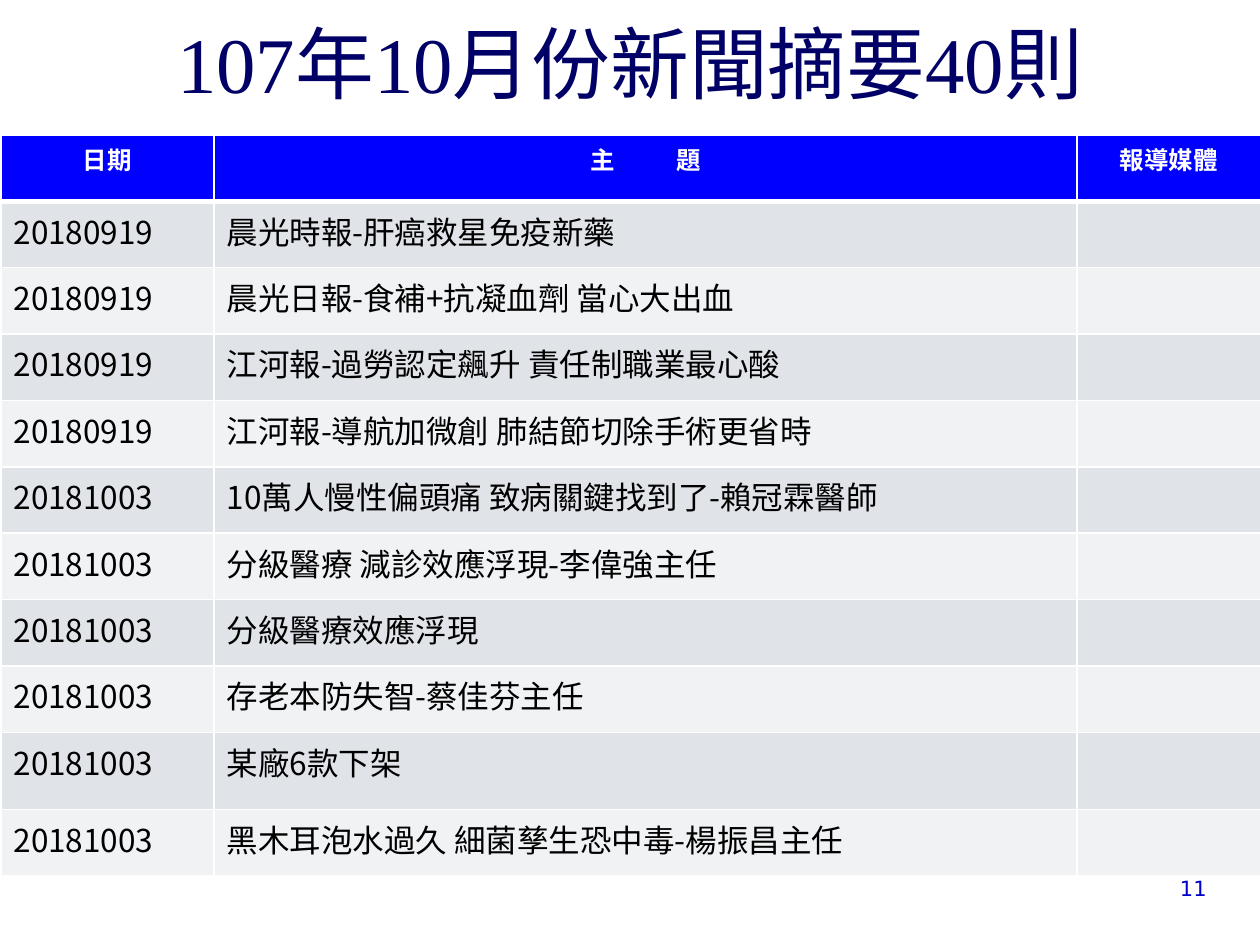
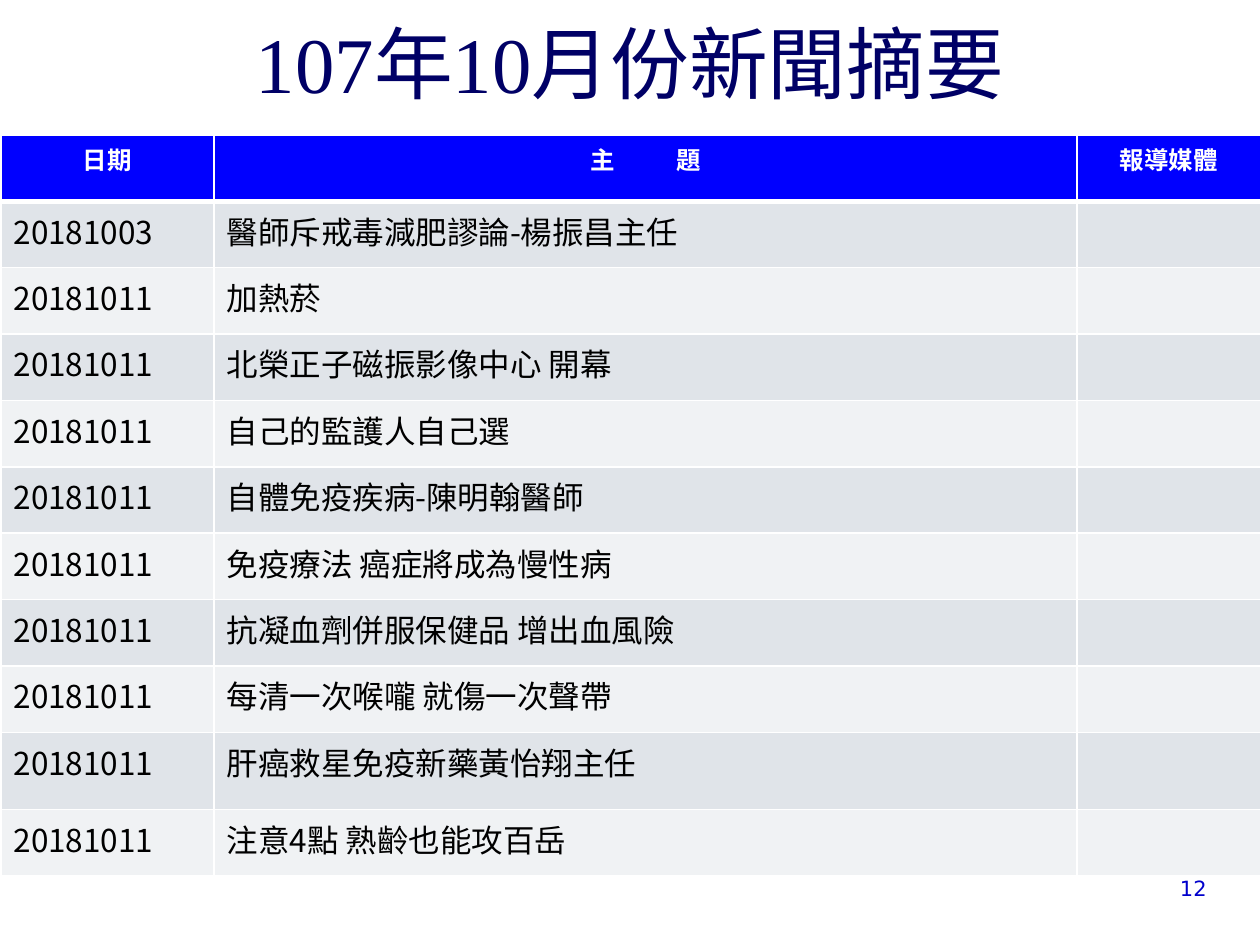
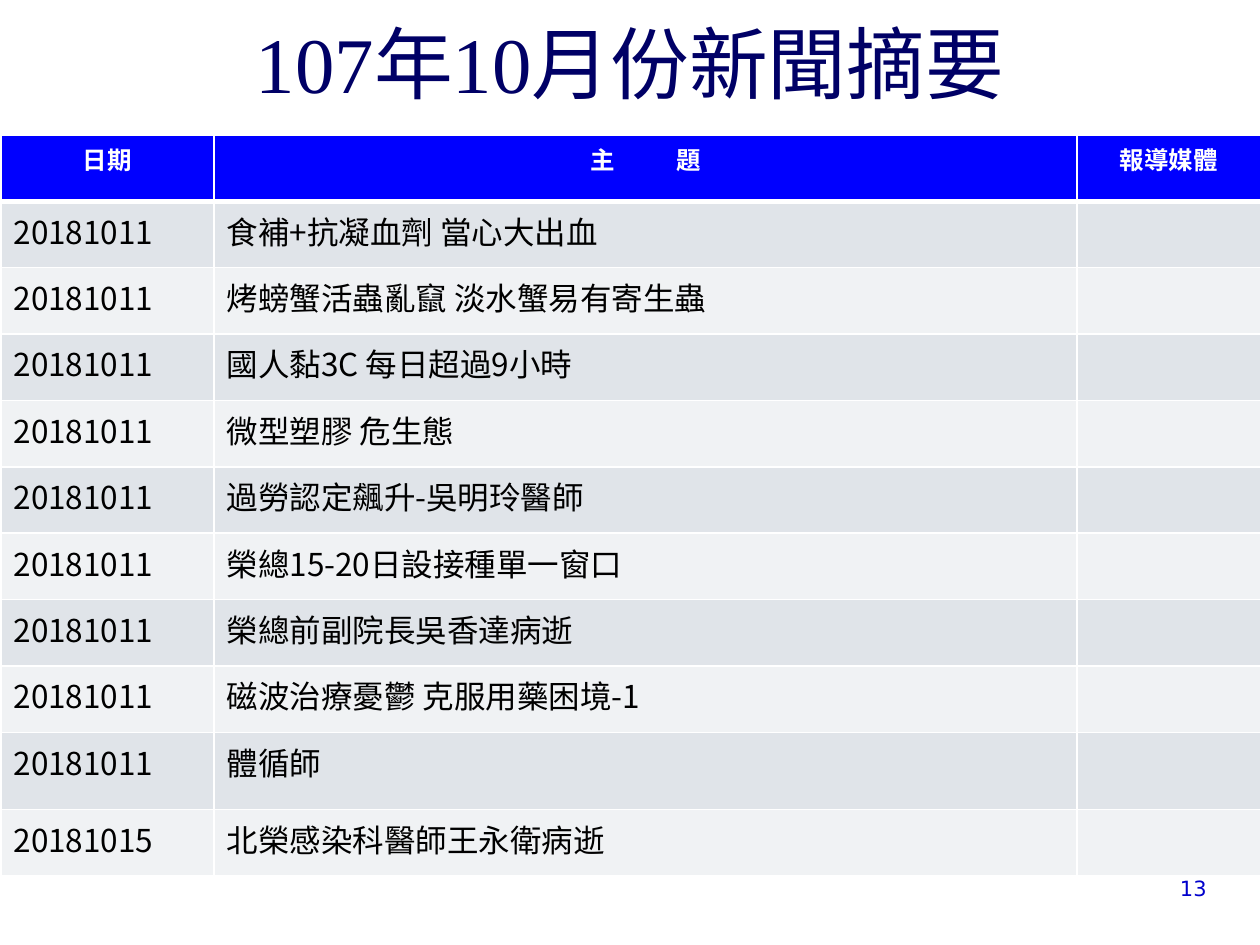
from lxml import etree
from pptx import Presentation
from pptx.dml.color import RGBColor
from pptx.enum.text import MSO_ANCHOR, MSO_AUTO_SIZE, PP_ALIGN
from pptx.oxml.ns import qn
from pptx.util import Pt

CENTER, RIGHT, LEFT = PP_ALIGN.CENTER, PP_ALIGN.RIGHT, PP_ALIGN.LEFT
BOTTOM, NO_FIT = MSO_ANCHOR.BOTTOM, MSO_AUTO_SIZE.NONE
PX = 914400 / 126
CJK = "Noto Sans CJK SC"
NAVY, BLUE, NUMBER_BLUE = "000066", "0000FF", "0000CC"
WHITE, BLACK = "FFFFFF", "000000"
BANDS = ["F0F2F4", "E0E4E9"]
COLUMNS = [213, 863, 184]
TABLE_TOP, TABLE_HEIGHT = 135, 741
TALL_ROW, TALL_HEIGHT = 9, 77
FIRST_NUMBER = 11
HEADER = [["日期"], ["主", " ", "題"], ["報導媒體"]]
HEADER_GAP = 3200

SLIDES = [
    ("107年10月份新聞摘要40則", [
        ("20180919", "晨光時報-肝癌救星免疫新藥"),
        ("20180919", "晨光日報-食補+抗凝血劑 當心大出血"),
        ("20180919", "江河報-過勞認定飆升 責任制職業最心酸"),
        ("20180919", "江河報-導航加微創 肺結節切除手術更省時"),
        ("20181003", "10萬人慢性偏頭痛 致病關鍵找到了-賴冠霖醫師"),
        ("20181003", "分級醫療 減診效應浮現-李偉強主任"),
        ("20181003", "分級醫療效應浮現"),
        ("20181003", "存老本防失智-蔡佳芬主任"),
        ("20181003", "某廠6款下架"),
        ("20181003", "黑木耳泡水過久 細菌孳生恐中毒-楊振昌主任"),
    ]),
    ("107年10月份新聞摘要", [
        ("20181003", "醫師斥戒毒減肥謬論-楊振昌主任"),
        ("20181011", "加熱菸"),
        ("20181011", "北榮正子磁振影像中心 開幕"),
        ("20181011", "自己的監護人自己選"),
        ("20181011", "自體免疫疾病-陳明翰醫師"),
        ("20181011", "免疫療法 癌症將成為慢性病"),
        ("20181011", "抗凝血劑併服保健品 增出血風險"),
        ("20181011", "每清一次喉嚨 就傷一次聲帶"),
        ("20181011", "肝癌救星免疫新藥黃怡翔主任"),
        ("20181011", "注意4點 熟齡也能攻百岳"),
    ]),
    ("107年10月份新聞摘要", [
        ("20181011", "食補+抗凝血劑 當心大出血"),
        ("20181011", "烤螃蟹活蟲亂竄 淡水蟹易有寄生蟲"),
        ("20181011", "國人黏3C 每日超過9小時"),
        ("20181011", "微型塑膠 危生態"),
        ("20181011", "過勞認定飆升-吳明玲醫師"),
        ("20181011", "榮總15-20日設接種單一窗口"),
        ("20181011", "榮總前副院長吳香達病逝"),
        ("20181011", "磁波治療憂鬱 克服用藥困境-1"),
        ("20181011", "體循師"),
        ("20181015", "北榮感染科醫師王永衛病逝"),
    ]),
]


def rgb(color):
    return RGBColor.from_string(color)


def add_run(p, text, size, font, color, bold=False):
    r = p.add_run()
    r.text = text
    r.font.size, r.font.bold, r.font.name = Pt(size), bold, font
    r.font.color.rgb = rgb(color)
    etree.SubElement(r.font._element, qn("a:ea"), typeface=CJK)
    return r


prs = Presentation()
prs.slide_width, prs.slide_height = round(1260 * PX), round(945 * PX)

for number, (title, news) in enumerate(SLIDES, FIRST_NUMBER):
    s = prs.slides.add_slide(prs.slide_layouts[5])
    sp = s.shapes.title
    sp.left, sp.top, sp.width, sp.height = [round(v * PX) for v in (79, 43, 1102, 73)]
    tf = sp.text_frame
    tf.auto_size, tf.vertical_anchor, tf.word_wrap = NO_FIT, BOTTOM, True
    p = tf.paragraphs[0]
    p.alignment = CENTER
    add_run(p, title, 45, "Times New Roman", NAVY)

    box = [round(v * PX) for v in (1, TABLE_TOP, sum(COLUMNS), TABLE_HEIGHT)]
    table = s.shapes.add_table(len(news) + 1, len(COLUMNS), *box).table
    for column, width in zip(table.columns, COLUMNS):
        column.width = round(width * PX)
    row_height = (TABLE_HEIGHT - TALL_HEIGHT) / len(news)
    rows = [HEADER] + [([date], [topic], []) for date, topic in news]
    for i, row in enumerate(rows):
        table.rows[i].height = round((TALL_HEIGHT if i == TALL_ROW else row_height) * PX)
        for j, parts in enumerate(row):
            cell = table.cell(i, j)
            cell.fill.solid()
            cell.fill.fore_color.rgb = rgb(BANDS[i % 2] if i else BLUE)
            p = cell.text_frame.paragraphs[0]
            p.alignment = LEFT if i else CENTER
            for text in parts:
                if i:
                    add_run(p, text, 18, CJK, BLACK)
                else:
                    r = add_run(p, text, 14, CJK, WHITE, True)
                    if text == " ":
                        r.font._element.set("spc", str(HEADER_GAP))
            tcPr = cell._tc.get_or_add_tcPr()
            for k, side in enumerate(["lnL", "lnR", "lnT", "lnB"]):
                thick = (i, side) in [(0, "lnB"), (1, "lnT")]
                ln = etree.Element(qn("a:" + side), w=str(Pt(3 if thick else 1)))
                fill = etree.SubElement(ln, qn("a:solidFill"))
                etree.SubElement(fill, qn("a:srgbClr"), val=WHITE)
                tcPr.insert(k, ln)

    sp = s.shapes.add_textbox(*[round(v * PX) for v in (1126, 869, 93, 38)])
    tf = sp.text_frame
    tf.word_wrap = True
    p = tf.paragraphs[0]
    p.alignment = RIGHT
    add_run(p, str(number), 12, "DejaVu Sans", NUMBER_BLUE)

prs.save("out.pptx")
